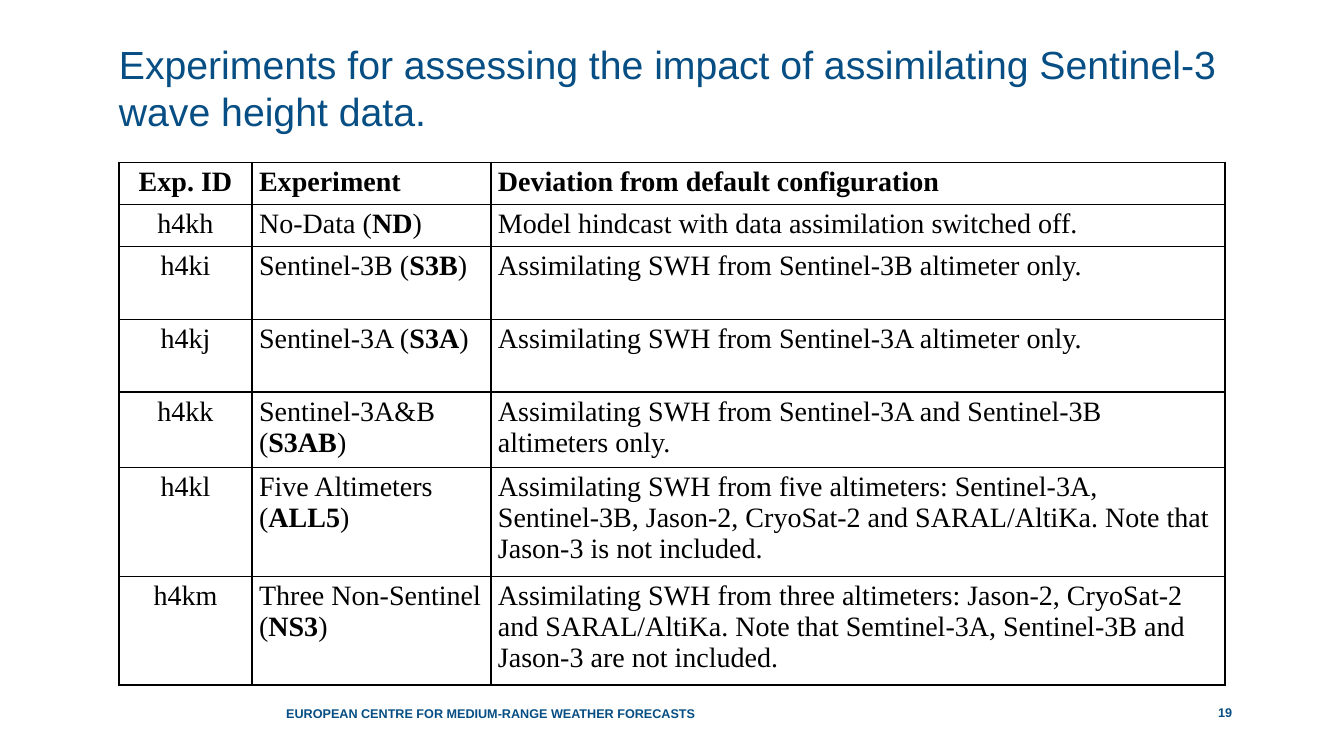
from dataclasses import dataclass

from lxml.etree import SubElement
from pptx import Presentation
from pptx.dml.color import RGBColor
from pptx.enum.text import MSO_ANCHOR, PP_ALIGN
from pptx.oxml.ns import qn
from pptx.slide import Slide
from pptx.table import Table, _Cell
from pptx.util import Inches, Pt

BLUE = RGBColor(0x06, 0x4E, 0x83)
BLACK = RGBColor(0, 0, 0)
WHITE = RGBColor(255, 255, 255)
WIDTHS = (1.32, 2.37, 7.28)


@dataclass
class Label:
    text: str
    left: float
    top: float
    width: float
    height: float
    size: int
    bold: bool = True
    align: PP_ALIGN = PP_ALIGN.CENTER
    anchor: MSO_ANCHOR = MSO_ANCHOR.BOTTOM
    pitch: int | None = None


@dataclass
class Trial:
    code: str
    name: str
    short: str
    change: str
    height: float


LABELS = (
    Label("Experiments for assessing the impact of assimilating Sentinel-3 wave height data.",
          1.18, 0.39, 10.97, 0.47, 28, False, PP_ALIGN.LEFT, MSO_ANCHOR.TOP, 34),
    Label("EUROPEAN CENTRE FOR MEDIUM-RANGE WEATHER FORECASTS", 2.65, 6.9, 4.43, 0.25, 9),
    Label("19", 10.97, 6.9, 2.36, 0.24, 9),
)
HEADS = ("Exp. ID", "Experiment", "Deviation from default configuration")
TRIALS = (
    Trial("h4kh", "No-Data", "ND", "Model hindcast with data assimilation switched off.", 0.42),
    Trial("h4ki", "Sentinel-3B", "S3B", "Assimilating SWH from Sentinel-3B altimeter only.", 0.72),
    Trial("h4kj", "Sentinel-3A", "S3A", "Assimilating SWH from Sentinel-3A altimeter only.", 0.72),
    Trial("h4kk", "Sentinel-3A&B", "S3AB",
          "Assimilating SWH from Sentinel-3A and Sentinel-3B altimeters only.", 0.72),
    Trial("h4kl", "Five Altimeters", "ALL5",
          "Assimilating SWH from five altimeters: Sentinel-3A, Sentinel-3B, Jason-2, "
          "CryoSat-2 and SARAL/AltiKa. Note that Jason-3 is not included.", 1.02),
    Trial("h4km", "Three Non-Sentinel", "NS3",
          "Assimilating SWH from three altimeters: Jason-2, CryoSat-2 and SARAL/AltiKa. "
          "Note that Semtinel-3A, Sentinel-3B and Jason-3 are not included.", 1.02),
)


def add_label(slide: Slide, label: Label) -> None:
    box = slide.shapes.add_textbox(Inches(label.left), Inches(label.top),
                                   Inches(label.width), Inches(label.height))
    frame = box.text_frame
    frame.margin_left = frame.margin_right = frame.margin_top = frame.margin_bottom = 0
    frame.word_wrap = True
    frame.vertical_anchor = label.anchor
    frame.text = label.text
    line = frame.paragraphs[0]
    line.alignment = label.align
    if label.pitch:
        line.line_spacing = Pt(label.pitch)
    font = line.runs[0].font
    font.name, font.size, font.bold = "Arial", Pt(label.size), label.bold
    font.color.rgb = BLUE


def add_edges(cell: _Cell) -> None:
    props = cell._tc.get_or_add_tcPr()
    for place, side in enumerate(("lnL", "lnR", "lnT", "lnB")):
        edge = SubElement(props, qn(f"a:{side}"), w=str(Pt(1)))
        fill = SubElement(edge, qn("a:solidFill"))
        SubElement(fill, qn("a:srgbClr"), val=str(BLACK))
        props.insert(place, edge)


def fill_cell(cell: _Cell, parts: tuple[str, ...], align: PP_ALIGN, head: bool) -> None:
    cell.fill.solid()
    cell.fill.fore_color.rgb = WHITE
    cell.margin_left = cell.margin_right = Inches(0.07)
    cell.margin_top = cell.margin_bottom = Inches(0.04)
    line = cell.text_frame.paragraphs[0]
    line.alignment = align
    for place, part in enumerate(parts):
        run = line.add_run()
        run.text = part
        font = run.font
        font.name, font.size = "Times New Roman", Pt(20)
        font.bold = head or place == 1
        font.color.rgb = BLACK
    add_edges(cell)


def fill_row(table: Table, row: int, cells: tuple[tuple[str, ...], ...], height: float) -> None:
    table.rows[row].height = Inches(height)
    for col, parts in enumerate(cells):
        align = PP_ALIGN.LEFT if col else PP_ALIGN.CENTER
        fill_cell(table.cell(row, col), parts, align, row == 0)


def add_trials(slide: Slide) -> None:
    frame = slide.shapes.add_table(len(TRIALS) + 1, len(HEADS), Inches(1.18), Inches(1.61),
                                   Inches(sum(WIDTHS)), Inches(5.04))
    table = frame.table
    table.first_row = table.horz_banding = False
    for col, width in zip(table.columns, WIDTHS):
        col.width = Inches(width)
    fill_row(table, 0, tuple((head,) for head in HEADS), 0.42)
    for row, trial in enumerate(TRIALS, 1):
        name = (f"{trial.name} (", trial.short, ")")
        fill_row(table, row, ((trial.code,), name, (trial.change,)), trial.height)


def main() -> None:
    deck = Presentation()
    deck.slide_width, deck.slide_height = Inches(13.33), Inches(7.5)
    slide = deck.slides.add_slide(deck.slide_layouts[6])
    for label in LABELS:
        add_label(slide, label)
    add_trials(slide)
    deck.save("out.pptx")


if __name__ == "__main__":
    main()
